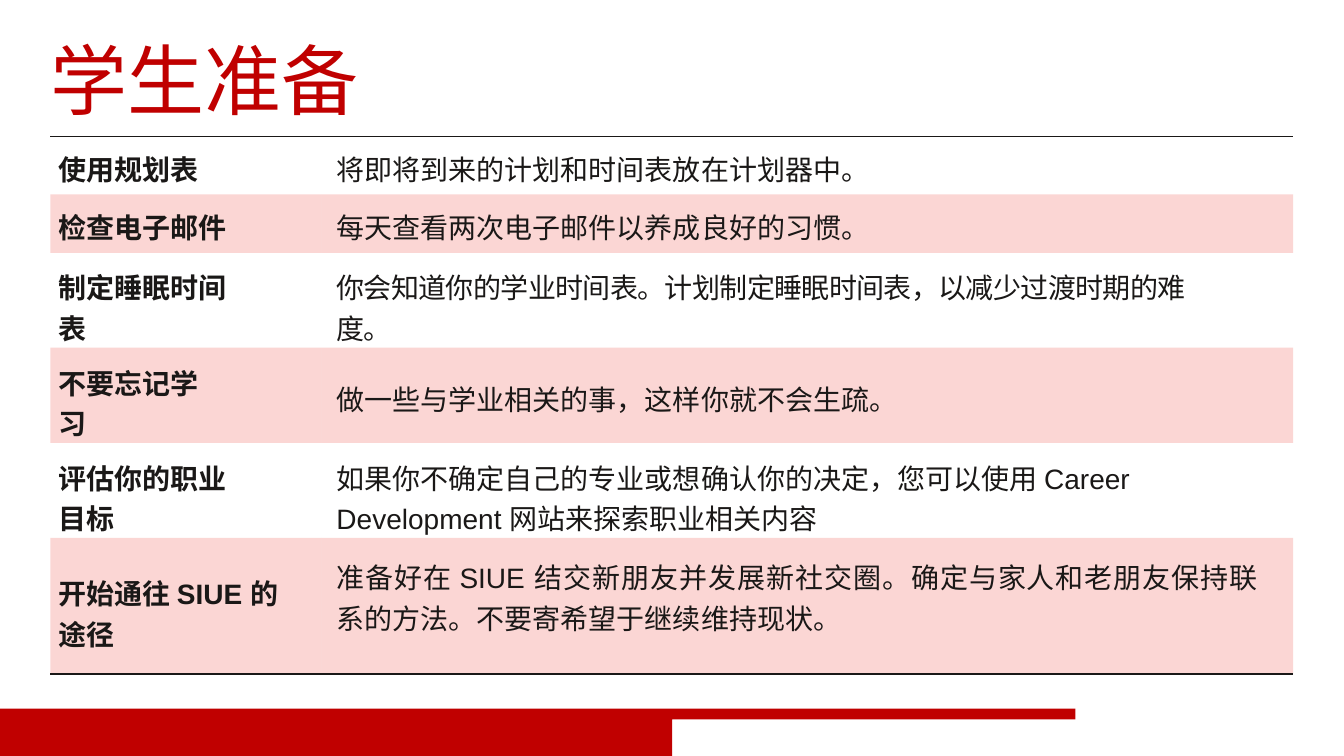
from dataclasses import dataclass

from lxml import etree
from pptx import Presentation
from pptx.dml.color import RGBColor
from pptx.enum.text import MSO_ANCHOR, MSO_AUTO_SIZE, PP_ALIGN
from pptx.oxml.ns import qn
from pptx.util import Cm, Pt

TOP = MSO_ANCHOR.TOP
LEFT, JUSTIFY = PP_ALIGN.LEFT, PP_ALIGN.JUSTIFY
NO_AUTOFIT = MSO_AUTO_SIZE.NONE
PLAIN_TABLE_STYLE = "{2D5ABB26-0587-4C30-8999-92F81FD0307C}"


@dataclass(frozen=True)
class Theme:
    red: RGBColor = RGBColor(0xC0, 0x00, 0x00)
    ink: RGBColor = RGBColor(0x1A, 0x18, 0x17)
    stripe: RGBColor = RGBColor(0xED, 0x34, 0x29)
    stripe_alpha: int = 20
    title_font: str = "Montserrat"
    body_font: str = "Arial"
    title_size: Pt = Pt(55)
    body_size: Pt = Pt(20)


@dataclass(frozen=True)
class Entry:
    """Text of one table cell with its top and right insets in cm."""
    text: str
    top: float
    right: float = 0
    tracking: float = 0
    align: PP_ALIGN = LEFT


THEME = Theme()
COLUMN_WIDTHS = (6.83, 24.49)
COLUMN_INSETS = (0.2, 0.38)
BOTTOM_RULES = (1, 2.25)

# Row height in cm, habit, advice
HABITS = [
    (1.47, Entry("使用规划表", 0.3),
     Entry("将即将到来的计划和时间表放在计划器中。", 0.3)),
    (1.47, Entry("检查电子邮件", 0.3),
     Entry("每天查看两次电子邮件以养成良好的习惯。", 0.3)),
    (2.39, Entry("制定睡眠时间表", 0.34, right=2),
     Entry("你会知道你的学业时间表。计划制定睡眠时间表，以减少过渡时期的难度。",
           0.34, right=2.3, tracking=-0.5)),
    (2.36, Entry("不要忘记学习", 0.35, right=2.75),
     Entry("做一些与学业相关的事，这样你就不会生疏。", 0.77)),
    (2.39, Entry("评估你的职业目标", 0.35, right=2),
     Entry("如果你不确定自己的专业或想确认你的决定，您可以使用 Career Development "
           "网站来探索职业相关内容", 0.35)),
    (3.43, Entry("开始通往 SIUE 的途径", 0.86, right=0.4),
     Entry("准备好在 SIUE 结交新朋友并发展新社交圈。确定与家人和老朋友保持联系的方法。"
           "不要寄希望于继续维持现状。", 0.45, right=0.9, align=JUSTIFY)),
]


def add_footer_band(slide, left, top, width, height):
    """Thin bar across the whole width, thick over its left part."""
    step_x = left + Cm(16.94)
    step_y = top + Cm(0.27)
    right, bottom = left + width, top + height
    outline = slide.shapes.build_freeform(left, top)
    outline.add_line_segments([
        (right, top), (right, step_y), (step_x, step_y),
        (step_x, bottom), (left, bottom)])
    band = outline.convert_to_shape()
    band.shadow.inherit = False
    band.fill.solid()
    band.fill.fore_color.rgb = THEME.red
    band.line.fill.background()


def place_title(slide, text, left, top, width, height):
    title = slide.shapes.title
    title.left, title.top, title.width, title.height = left, top, width, height
    frame = title.text_frame
    frame.text = text
    frame.auto_size = NO_AUTOFIT
    frame.vertical_anchor = TOP
    frame.margin_left = frame.margin_right = frame.margin_bottom = 0
    frame.margin_top = Cm(0.05)
    heading = frame.paragraphs[0]
    heading.alignment = LEFT
    heading.line_spacing = 0.9
    font = heading.runs[0].font
    font.name, font.size = THEME.title_font, THEME.title_size
    font.color.rgb = THEME.red


def add_rule(cell, side, points):
    """Draw a cell border; side is lnT or lnB."""
    rule = etree.Element(qn(f"a:{side}"), w=str(Pt(points)))
    fill = etree.SubElement(rule, qn("a:solidFill"))
    etree.SubElement(fill, qn("a:srgbClr"), val=str(THEME.ink))
    cell._tc.get_or_add_tcPr().insert(0, rule)


def fill_stripe(cell):
    cell.fill.solid()
    cell.fill.fore_color.rgb = THEME.stripe
    colour = next(cell._tc.tcPr.iter(qn("a:srgbClr")))
    etree.SubElement(colour, qn("a:alpha"), val=str(THEME.stripe_alpha * 1000))


def write_entry(cell, entry, inset, bold):
    cell.vertical_anchor = TOP
    cell.margin_left, cell.margin_right = Cm(inset), Cm(entry.right)
    cell.margin_top, cell.margin_bottom = Cm(entry.top), 0
    cell.text_frame.text = entry.text
    paragraph = cell.text_frame.paragraphs[0]
    paragraph.alignment = entry.align
    font = paragraph.runs[0].font
    font.name, font.size, font.bold = THEME.body_font, THEME.body_size, bold
    font.color.rgb = THEME.ink
    if entry.tracking:
        run_properties = paragraph.runs[0]._r.get_or_add_rPr()
        run_properties.set("spc", str(int(entry.tracking * 100)))


def add_habit_table(slide, left, top, width, height):
    frame = slide.shapes.add_table(
        len(HABITS), len(COLUMN_WIDTHS), left, top, width, height)
    next(frame.element.iter(qn("a:tableStyleId"))).text = PLAIN_TABLE_STYLE
    table = frame.table
    table.first_row = table.horz_banding = False
    for column, column_width in zip(table.columns, COLUMN_WIDTHS):
        column.width = Cm(column_width)
    last = len(HABITS) - 1
    for row, (row_height, *entries) in enumerate(HABITS):
        table.rows[row].height = Cm(row_height)
        for column, entry in enumerate(entries):
            cell = table.cell(row, column)
            write_entry(cell, entry, COLUMN_INSETS[column], bold=column == 0)
            if row % 2:
                fill_stripe(cell)
            else:
                cell.fill.background()
            if row == 0:
                add_rule(cell, "lnT", 1)
            elif row == last:
                add_rule(cell, "lnB", BOTTOM_RULES[column])


def main():
    deck = Presentation()
    deck.slide_width, deck.slide_height = Cm(33.87), Cm(19.05)
    title_only = deck.slide_layouts[5]
    slide = deck.slides.add_slide(title_only)
    add_footer_band(slide, 0, Cm(17.86), Cm(27.1), Cm(1.19))
    place_title(slide, "学生准备", Cm(1.27), Cm(1.04), Cm(30.12), Cm(2.39))
    add_habit_table(slide, Cm(1.27), Cm(3.43), Cm(31.32), Cm(13.51))
    deck.save("out.pptx")


if __name__ == "__main__":
    main()
